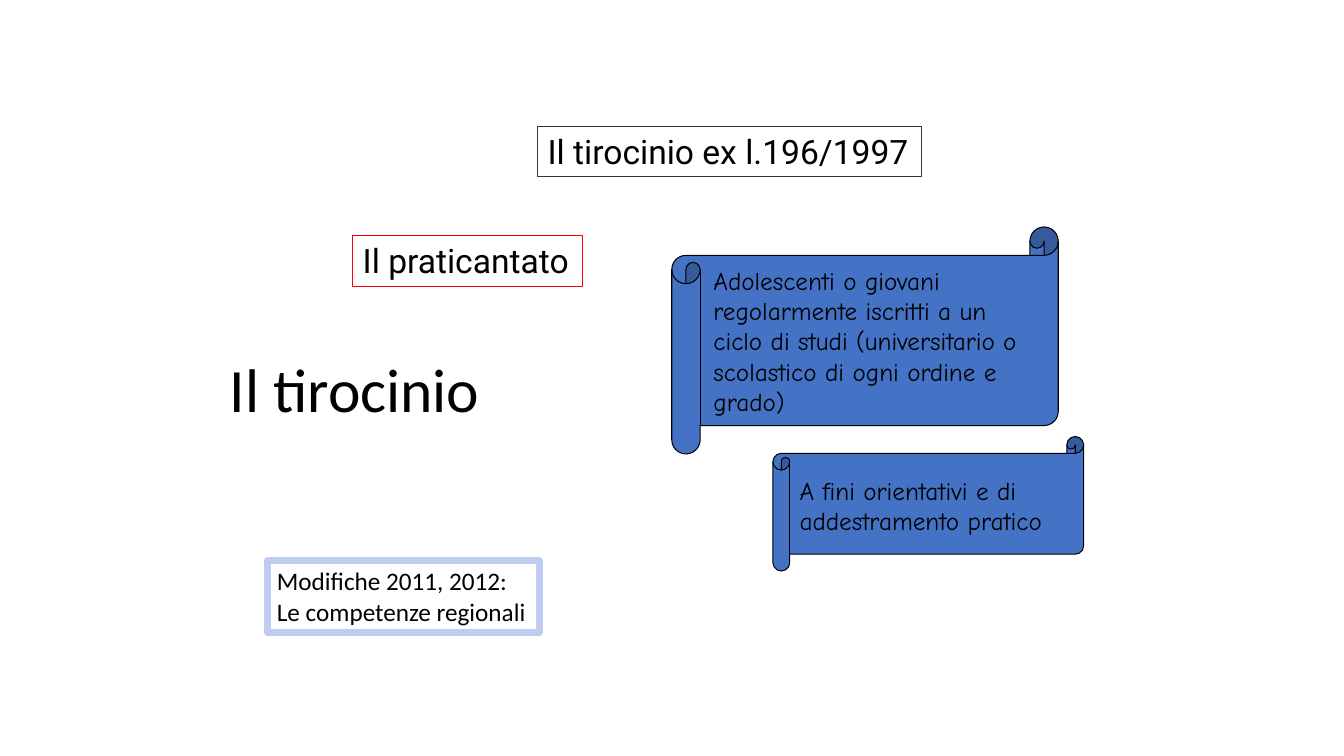
from pptx import Presentation
from pptx.dml.color import RGBColor
from pptx.enum.shapes import MSO_SHAPE
from pptx.enum.text import MSO_ANCHOR, MSO_AUTO_SIZE, PP_ALIGN
from pptx.util import Cm, Pt

COLORS = {
    "text": "000000",
    "outline": "000000",
    "scroll": "4472C4",
    "red": "FF0000",
    "dark": "333333",
    "pale_blue": "C0CBF0",
}


class SlideBuilder:
    def __init__(self, slide, colors):
        self.slide = slide
        self.colors = colors

    def color(self, name):
        return RGBColor.from_string(self.colors[name])

    def outline(self, shape, color, width):
        shape.line.color.rgb = self.color(color)
        shape.line.width = Pt(width)

    def scroll(self, left, top, width, height):
        shape = self.slide.shapes.add_shape(
            MSO_SHAPE.HORIZONTAL_SCROLL, Cm(left), Cm(top), Cm(width), Cm(height))
        shape.shadow.inherit = False
        shape.fill.solid()
        shape.fill.fore_color.rgb = self.color("scroll")
        self.outline(shape, "outline", 0.75)

    def text(self, content, left, top, width, height, font, size, wrap=True):
        shape = self.slide.shapes.add_textbox(Cm(left), Cm(top), Cm(width), Cm(height))
        text_frame = shape.text_frame
        text_frame.text = content
        text_frame.word_wrap = wrap
        text_frame.auto_size = MSO_AUTO_SIZE.SHAPE_TO_FIT_TEXT
        for paragraph in text_frame.paragraphs:
            paragraph.alignment = PP_ALIGN.LEFT
            for run in paragraph.runs:
                run.font.name = font
                run.font.size = Pt(size)
                run.font.color.rgb = self.color("text")
        return shape

    def title(self, content, left, top, width, height):
        shape = self.text(content, left, top, width, height, "Calibri", 44)
        shape.text_frame.auto_size = MSO_AUTO_SIZE.NONE
        shape.text_frame.vertical_anchor = MSO_ANCHOR.MIDDLE
        shape.text_frame.paragraphs[0].line_spacing = 0.9

    def framed_text(self, content, left, top, width, height, font, size, color, line_width=0.75):
        shape = self.text(content, left, top, width, height, font, size, wrap=False)
        self.outline(shape, color, line_width)


def main():
    presentation = Presentation()
    presentation.slide_width = Cm(33.87)
    presentation.slide_height = Cm(19.05)
    slide = presentation.slides.add_slide(presentation.slide_layouts[6])
    builder = SlideBuilder(slide, COLORS)

    builder.scroll(19.48, 11, 7.83, 3.39)
    builder.scroll(16.93, 5.72, 9.74, 5.72)
    builder.title("Il tirocinio", 5.54, 8.33, 10.21, 3.1)
    builder.framed_text("Il praticantato", 8.89, 5.93, 5.8, 1.28, "Roboto", 24, "red")
    builder.framed_text("Il tirocinio ex l.196/1997", 13.55, 3.18, 9.68, 1.28, "Roboto", 24, "dark")
    builder.text(
        "Adolescenti o giovani regolarmente iscritti a un ciclo di studi "
        "(universitario o scolastico di ogni ordine e grado)",
        17.73, 6.56, 8.51, 4.06, "Comic Neue", 18)
    builder.text(
        "A fini orientativi e di addestramento pratico",
        19.9, 11.85, 7.62, 1.78, "Comic Neue", 18)
    builder.framed_text(
        "Modifiche 2011, 2012:\nLe competenze regionali",
        6.73, 14.13, 6.86, 1.8, "Calibri", 18, "pale_blue", 5)

    presentation.save("out.pptx")


if __name__ == "__main__":
    main()
